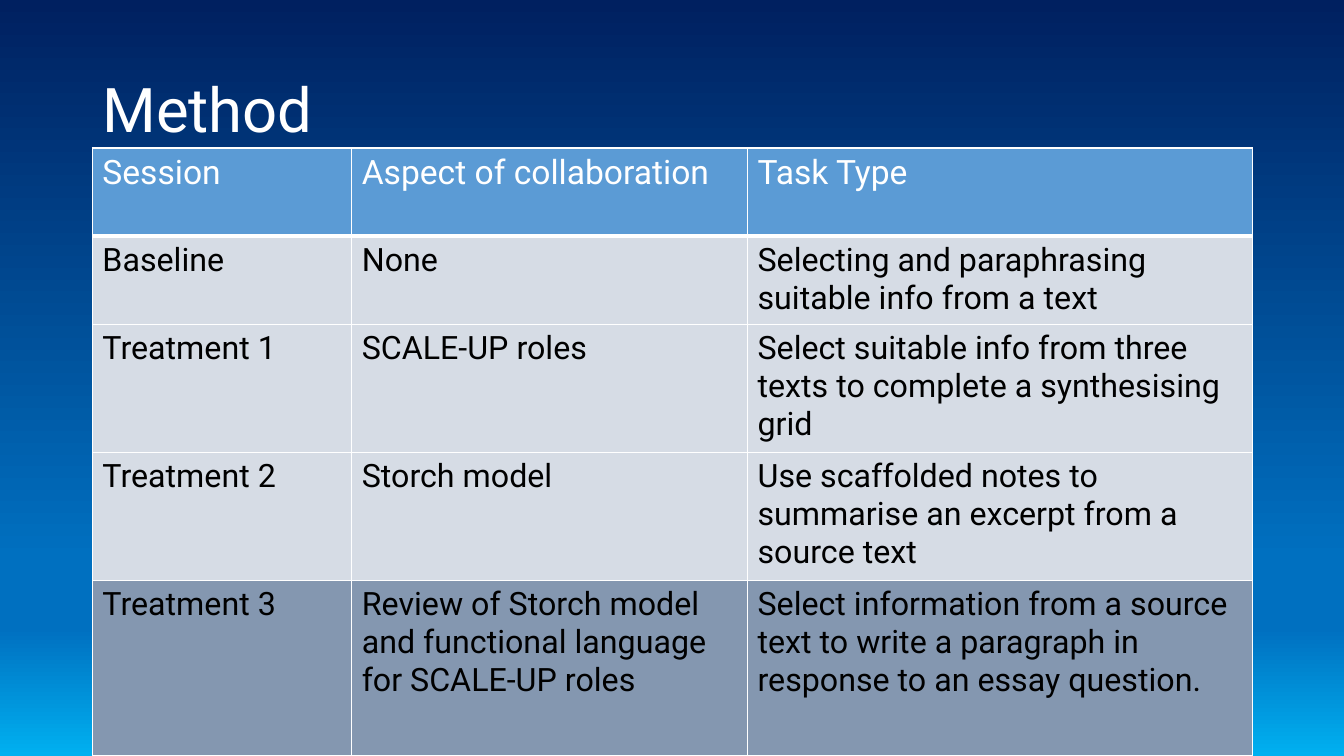
from lxml.etree import SubElement
from pptx import Presentation
from pptx.dml.color import RGBColor as Color
from pptx.enum.text import MSO_ANCHOR as Anchor
from pptx.oxml.ns import qn
from pptx.util import Pt

PX = 9525
COLORS = {
    "navy": "002060",
    "blue": "0070C0",
    "sky": "00B0F0",
    "header": "5B9BD5",
    "pale": "D6DCE5",
    "slate": "8497B0",
    "white": "FFFFFF",
    "black": "000000",
}
GRADIENT = [(0, "navy"), (74, "blue"), (83, "blue"), (100, "sky")]
COLUMN_WIDTHS = [247, 377, 481]
ROW_HEIGHTS = [84, 84, 122, 122, 167]
ROW_FILLS = ["header", "pale", "pale", "pale", "slate"]
SESSIONS = [
    ("Session", "Aspect of collaboration", "Task Type"),
    ("Baseline", "None", "Selecting and paraphrasing suitable info from a text"),
    ("Treatment 1", "SCALE-UP roles",
     "Select suitable info from three texts to complete a synthesising grid"),
    ("Treatment 2", "Storch model",
     "Use scaffolded notes to summarise an excerpt from a source text"),
    ("Treatment 3", "Review of Storch model and functional language for SCALE-UP roles",
     "Select information from a source text to write a paragraph in response to an essay question."),
]


def write(frame, text, size, color, spacing=None):
    frame.word_wrap = True
    para = frame.paragraphs[0]
    para.line_spacing = spacing
    span = para.add_run()
    span.text = text
    span.font.name = "Roboto"
    span.font.size = Pt(size)
    span.font.color.rgb = Color.from_string(COLORS[color])


def add_border(cell, side, width):
    line = SubElement(cell._tc.get_or_add_tcPr(), qn(f"a:ln{side}"), w=str(Pt(width)))
    fill = SubElement(line, qn("a:solidFill"))
    SubElement(fill, qn("a:srgbClr"), val=COLORS["white"])


deck = Presentation()
deck.slide_width, deck.slide_height = 1280 * PX, 720 * PX
page = deck.slides.add_slide(deck.slide_layouts[6])

backdrop = page.background.fill
backdrop.gradient()
backdrop.gradient_angle = 270
stops = page._element.find(".//" + qn("a:gsLst"))
stops.clear()
for percent, color in GRADIENT:
    stop = SubElement(stops, qn("a:gs"), pos=str(percent * 1000))
    SubElement(stop, qn("a:srgbClr"), val=COLORS[color])

title = page.shapes.add_textbox(88 * PX, 38 * PX, 1104 * PX, 139 * PX)
title.text_frame.vertical_anchor = Anchor.MIDDLE
write(title.text_frame, "Method", size=44, color="white", spacing=0.9)

table = page.shapes.add_table(
    len(ROW_HEIGHTS), len(COLUMN_WIDTHS), 88 * PX, 141 * PX,
    sum(COLUMN_WIDTHS) * PX, sum(ROW_HEIGHTS) * PX,
).table
for column, width in zip(table.columns, COLUMN_WIDTHS):
    column.width = width * PX
for row, height in zip(table.rows, ROW_HEIGHTS):
    row.height = height * PX

for row_index, texts in enumerate(SESSIONS):
    is_header = row_index == 0
    for column_index, text in enumerate(texts):
        cell = table.cell(row_index, column_index)
        add_border(cell, "L", 1)
        add_border(cell, "R", 1)
        add_border(cell, "T", 3 if row_index == 1 else 1)
        add_border(cell, "B", 3 if is_header else 1)
        cell.fill.solid()
        cell.fill.fore_color.rgb = Color.from_string(COLORS[ROW_FILLS[row_index]])
        write(cell.text_frame, text, size=24 if is_header else 23,
              color="white" if is_header else "black")
        cell.text_frame.paragraphs[0].runs[0].font.bold = False

deck.save("out.pptx")
